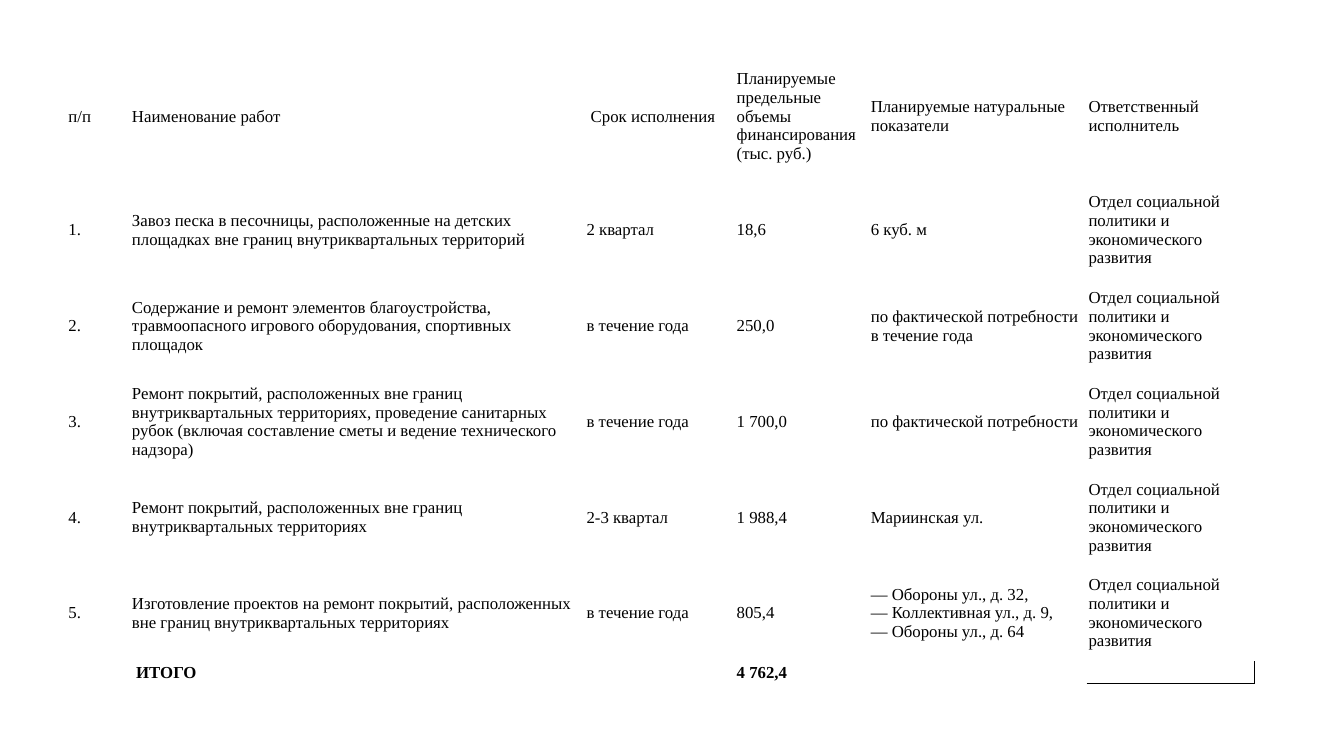
from lxml import etree
from pptx import Presentation
from pptx import util as u
from pptx.dml.color import RGBColor
from pptx.enum import text
from pptx.oxml import ns

COLORS = {"ink": "000000"}
FONT = "Times New Roman"
SIZE = 12
NO_STYLE_GRID = "{2D5ABB26-0587-4C30-8999-92F81FD0307C}"

COLUMN_WIDTHS = [45.36, 324.72, 107.28, 95.76, 155.52, 120.24]
ROW_HEIGHTS = [94.3] + [68.4] * 5 + [15.1]

HEADER = [
    "п/п",
    "Наименование работ",
    " Срок исполнения",
    "Планируемые предельные объемы финансирования\n(тыс. руб.)",
    "Планируемые натуральные показатели",
    "Ответственный исполнитель",
]
DEPARTMENT = "Отдел социальной политики и экономического развития"
WORKS = [
    ("Завоз песка в песочницы, расположенные на детских площадках вне границ "
     "внутриквартальных территорий",
     "2 квартал", "18,6", "6 куб. м"),
    ("Содержание и ремонт элементов благоустройства, травмоопасного игрового "
     "оборудования, спортивных площадок",
     "в течение года", "250,0", "по фактической потребности в течение года"),
    ("Ремонт покрытий, расположенных вне границ внутриквартальных территориях, "
     "проведение санитарных рубок (включая составление сметы и ведение "
     "технического надзора)",
     "в течение года", "1 700,0", "по фактической потребности"),
    ("Ремонт покрытий, расположенных вне границ внутриквартальных территориях",
     "2-3 квартал", "1 988,4", "Мариинская ул."),
    ("Изготовление проектов на ремонт покрытий, расположенных вне границ "
     "внутриквартальных территориях",
     "в течение года", "805,4",
     "— Обороны ул., д. 32,\n— Коллективная ул., д. 9,\n— Обороны ул., д. 64"),
]
TOTAL = ["", " ИТОГО", "", "4 762,4", "", ""]


def write_text(frame, content, size=SIZE, bold=False, color="ink"):
    """Write one paragraph per line; an empty line keeps the font size too."""
    for index, line in enumerate(content.split("\n")):
        para = frame.paragraphs[0] if index == 0 else frame.add_paragraph()
        if not line:
            etree.SubElement(para._p, ns.qn("a:endParaRPr"), sz=str(size * 100))
            continue
        span = para.add_run()
        span.text = line
        span.font.name = FONT
        span.font.size = u.Pt(size)
        span.font.bold = bold
        span.font.color.rgb = RGBColor.from_string(COLORS[color])


class SlideWriter:
    def __init__(self, page):
        self.page = page

    def table(self, rows, left, top):
        frame = self.page.shapes.add_table(
            len(rows), len(COLUMN_WIDTHS), u.Pt(left), u.Pt(top),
            u.Pt(sum(COLUMN_WIDTHS)), u.Pt(sum(ROW_HEIGHTS)))
        table = frame.table
        table.first_row = table.horz_banding = False
        table._tbl.tblPr.find(ns.qn("a:tableStyleId")).text = NO_STYLE_GRID
        for column, width in zip(table.columns, COLUMN_WIDTHS):
            column.width = u.Pt(width)
        for row, height, contents in zip(table.rows, ROW_HEIGHTS, rows):
            row.height = u.Pt(height)
            for cell, content in zip(row.cells, contents):
                self.cell(cell, content, bold=contents is TOTAL)
        return table

    def cell(self, cell, content, bold):
        cell.margin_left = cell.margin_right = u.Pt(1.44)
        cell.margin_top = cell.margin_bottom = u.Pt(0.72)
        cell.vertical_anchor = text.MSO_ANCHOR.MIDDLE
        cell.fill.background()
        write_text(cell.text_frame, content, bold=bold)

    def borders(self, cell, visible, width=1):
        """Draw the sides named in visible (L, R, T, B) and hide the others."""
        properties = cell._tc.get_or_add_tcPr()
        for position, side in enumerate("LRTB"):
            line = etree.Element(ns.qn(f"a:ln{side}"), w=str(u.Pt(width)))
            if side in visible:
                fill = etree.SubElement(line, ns.qn("a:solidFill"))
                etree.SubElement(fill, ns.qn("a:srgbClr"), val=COLORS["ink"])
            else:
                etree.SubElement(line, ns.qn("a:noFill"))
            properties.insert(position, line)


def main():
    deck = Presentation()
    deck.slide_width, deck.slide_height = u.Pt(960), u.Pt(540)
    writer = SlideWriter(deck.slides.add_slide(deck.slide_layouts[6]))
    numbered = [[f"{number}.", *work, DEPARTMENT]
                for number, work in enumerate(WORKS, 1)]
    plan = writer.table([HEADER, *numbered, TOTAL], left=47.5, top=36)
    last_row, last_column = len(ROW_HEIGHTS) - 1, len(COLUMN_WIDTHS) - 1
    writer.borders(plan.cell(last_row, last_column), visible="RB")
    deck.save("out.pptx")


if __name__ == "__main__":
    main()
